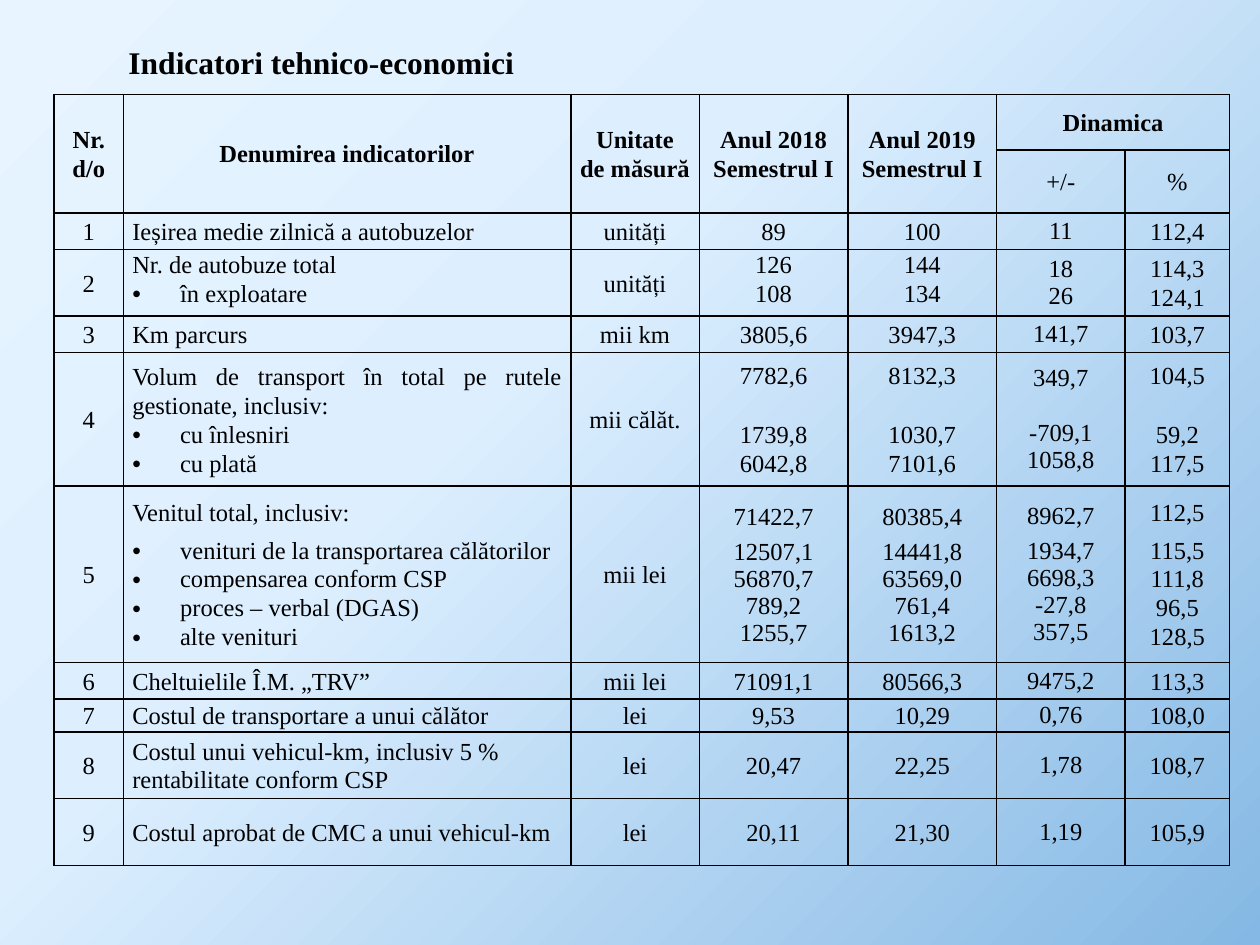
from dataclasses import dataclass

from lxml import etree
from pptx import Presentation
from pptx.dml.color import RGBColor
from pptx.enum.text import MSO_ANCHOR, PP_ALIGN
from pptx.oxml.ns import qn
from pptx.slide import Slide
from pptx.table import Table, _Cell
from pptx.text.text import _Paragraph
from pptx.util import Inches, Pt

CENTER, JUSTIFY, LEFT = PP_ALIGN.CENTER, PP_ALIGN.JUSTIFY, PP_ALIGN.LEFT
MIDDLE, TOP = MSO_ANCHOR.MIDDLE, MSO_ANCHOR.TOP

FONT = "Times New Roman"
TITLE_SIZE, TABLE_SIZE = 18, 14
LOOSE, TIGHT = 1.07, 1.0
LINE_FACTOR = 1.15
BULLET_INDENT = 0.38
COLORS = {"ink": "000000", "sky": "E8F4FF", "mist": "DDEFFF", "blue": "85B8E4"}
BACKGROUND_STOPS = ((0, "sky"), (40, "mist"), (100, "blue"))
BACKGROUND_FOCUS = {"l": -24, "t": -20, "r": 124, "b": 120}

TABLE_LEFT, TABLE_TOP = 0.43, 0.75
COLUMN_WIDTHS = (0.55, 3.55, 1.02, 1.18, 1.18, 1.02, 0.83)
HEADER_HEIGHTS = (0.44, 0.5)
DELTA_COLUMN = 5
YEAR_COLUMNS = (3, 4)


@dataclass(frozen=True)
class Heading:
    row: int
    column: int
    lines: tuple[str, ...]
    rows: int = 1
    columns: int = 1
    bold: bool = True


@dataclass(frozen=True)
class Indicator:
    height: float
    label: tuple[str, ...]
    unit: str
    values: tuple[str, str, str, str]
    label_align: PP_ALIGN = JUSTIFY
    top_aligned: bool = False
    label_gap: int = 0
    value_gap: int = 0
    tight_year_details: bool = False


HEADINGS = (
    Heading(0, 0, ("Nr.", "d/o"), rows=2),
    Heading(0, 1, ("Denumirea indicatorilor",), rows=2),
    Heading(0, 2, ("Unitate", "de măsură"), rows=2),
    Heading(0, 3, ("Anul 2018 Semestrul I",), rows=2),
    Heading(0, 4, ("Anul 2019 Semestrul I",), rows=2),
    Heading(0, 5, ("Dinamica",), columns=2),
    Heading(1, 5, ("+/-",), bold=False),
    Heading(1, 6, ("%",), bold=False),
)

INDICATORS = (
    Indicator(0.29, ("Ieșirea medie zilnică a autobuzelor",), "unități",
              ("89", "100", "11", "112,4")),
    Indicator(0.53, ("Nr. de autobuze total", "în exploatare"), "unități",
              ("126 108", "144 134", "18 26", "114,3 124,1"), top_aligned=True),
    Indicator(0.29, ("Km parcurs",), "mii km",
              ("3805,6", "3947,3", "141,7", "103,7")),
    Indicator(1.06, ("Volum de transport în total pe rutele gestionate, inclusiv:",
                     "cu înlesniri", "cu plată"), "mii călăt.",
              ("7782,6 1739,8 6042,8", "8132,3 1030,7 7101,6",
               "349,7 -709,1 1058,8", "104,5 59,2 117,5"), value_gap=14),
    Indicator(1.4, ("Venitul total, inclusiv:", "venituri de la transportarea călătorilor",
                    "compensarea conform CSP", "proces – verbal (DGAS)",
                    "alte venituri"), "mii lei",
              ("71422,7 12507,1 56870,7 789,2 1255,7",
               "80385,4 14441,8 63569,0 761,4 1613,2",
               "8962,7 1934,7 6698,3 -27,8 357,5",
               "112,5 115,5 111,8 96,5 128,5"),
              label_gap=4, value_gap=4, tight_year_details=True),
    Indicator(0.29, ("Cheltuielile Î.M. „TRV”",), "mii lei",
              ("71091,1", "80566,3", "9475,2", "113,3"), label_align=LEFT),
    Indicator(0.26, ("Costul de transportare a unui călător",), "lei",
              ("9,53", "10,29", "0,76", "108,0")),
    Indicator(0.53, ("Costul unui vehicul-km, inclusiv 5 % rentabilitate conform CSP",),
              "lei", ("20,47", "22,25", "1,78", "108,7"), label_align=LEFT),
    Indicator(0.53, ("Costul aprobat de CMC a unui vehicul-km",), "lei",
              ("20,11", "21,30", "1,19", "105,9")),
)


def format_runs(paragraph: _Paragraph, size: int, bold: bool) -> None:
    for run in paragraph.runs:
        run.font.name = FONT
        run.font.size = Pt(size)
        run.font.bold = bold
        run.font.color.rgb = RGBColor.from_string(COLORS["ink"])


def add_bullet(paragraph: _Paragraph) -> None:
    properties = paragraph._p.get_or_add_pPr()
    properties.set("marL", str(Inches(BULLET_INDENT)))
    properties.set("indent", str(-Inches(BULLET_INDENT)))
    etree.SubElement(properties, qn("a:buFont")).set("typeface", "Arial")
    etree.SubElement(properties, qn("a:buChar")).set("char", "•")


def write_cell(cell: _Cell, lines: tuple[str, ...], align: PP_ALIGN = CENTER,
               anchor: MSO_ANCHOR = MIDDLE, bold: bool = False, bulleted: bool = False,
               gap: int = 0, first_spacing: float = LOOSE,
               detail_spacing: float = LOOSE) -> None:
    cell.vertical_anchor = anchor
    cell.text_frame.text = "\n".join(lines)
    for index, paragraph in enumerate(cell.text_frame.paragraphs):
        paragraph.alignment = align
        paragraph.line_spacing = detail_spacing if index else first_spacing
        if index == 1 and gap:
            paragraph.space_before = Pt(round(gap * LINE_FACTOR * detail_spacing, 1))
        if index and bulleted:
            add_bullet(paragraph)
        format_runs(paragraph, TABLE_SIZE, bold)


def frame_cell(cell: _Cell) -> None:
    cell.margin_left = cell.margin_right = Inches(0.07)
    cell.margin_top = cell.margin_bottom = 0
    properties = cell._tc.get_or_add_tcPr()
    for side in ("a:lnL", "a:lnR", "a:lnT", "a:lnB"):
        border = etree.SubElement(properties, qn(side), w=str(Pt(1)))
        fill = etree.SubElement(border, qn("a:solidFill"))
        etree.SubElement(fill, qn("a:srgbClr"), val=COLORS["ink"])
    cell.fill.background()


def paint_background(slide: Slide) -> None:
    slide.background.fill.gradient()
    gradient = slide.element.find(".//" + qn("a:gradFill"))
    for child in list(gradient):
        gradient.remove(child)
    stops = etree.SubElement(gradient, qn("a:gsLst"))
    for position, color in BACKGROUND_STOPS:
        stop = etree.SubElement(stops, qn("a:gs"), pos=str(position * 1000))
        etree.SubElement(stop, qn("a:srgbClr"), val=COLORS[color])
    shape = etree.SubElement(gradient, qn("a:path"))
    shape.set("path", "circle")
    focus = etree.SubElement(shape, qn("a:fillToRect"))
    for side, percent in BACKGROUND_FOCUS.items():
        focus.set(side, str(percent * 1000))


def add_title(slide: Slide, text: str) -> None:
    title = slide.shapes.add_textbox(Inches(0.83), Inches(0.29), Inches(8.94), Inches(0.45))
    frame = title.text_frame
    frame.word_wrap = True
    frame.margin_left = Inches(0.19)
    frame.text = text
    format_runs(frame.paragraphs[0], TITLE_SIZE, True)


def write_heading(table: Table, heading: Heading) -> None:
    cell = table.cell(heading.row, heading.column)
    if heading.rows * heading.columns > 1:
        cell.merge(table.cell(heading.row + heading.rows - 1,
                              heading.column + heading.columns - 1))
    write_cell(cell, heading.lines, bold=heading.bold)


def write_indicator(table: Table, row: int, number: int, indicator: Indicator) -> None:
    anchor = TOP if indicator.top_aligned else MIDDLE
    write_cell(table.cell(row, 0), (str(number),))
    write_cell(table.cell(row, 1), indicator.label, indicator.label_align, anchor,
               bulleted=True, gap=indicator.label_gap)
    write_cell(table.cell(row, 2), (indicator.unit,))
    for column, values in enumerate(indicator.values, start=3):
        is_year, is_delta = column in YEAR_COLUMNS, column == DELTA_COLUMN
        tight_details = is_delta or (is_year and indicator.tight_year_details)
        write_cell(table.cell(row, column), tuple(values.split()),
                   anchor=anchor if is_year else MIDDLE, gap=indicator.value_gap,
                   first_spacing=TIGHT if is_delta else LOOSE,
                   detail_spacing=TIGHT if tight_details else LOOSE)


def add_indicator_table(slide: Slide) -> None:
    heights = [*HEADER_HEIGHTS, *(indicator.height for indicator in INDICATORS)]
    table = slide.shapes.add_table(
        len(heights), len(COLUMN_WIDTHS), Inches(TABLE_LEFT), Inches(TABLE_TOP),
        Inches(sum(COLUMN_WIDTHS)), Inches(sum(heights))).table
    table.first_row = table.horz_banding = False
    for column, width in zip(table.columns, COLUMN_WIDTHS):
        column.width = Inches(width)
    for row, height in zip(table.rows, heights):
        row.height = Inches(height)
    for cell in table.iter_cells():
        frame_cell(cell)
    for heading in HEADINGS:
        write_heading(table, heading)
    for number, indicator in enumerate(INDICATORS, start=1):
        write_indicator(table, number + 1, number, indicator)


def main() -> None:
    presentation = Presentation()
    presentation.slide_width, presentation.slide_height = Inches(10), Inches(7.5)
    slide = presentation.slides.add_slide(presentation.slide_layouts[6])
    paint_background(slide)
    add_title(slide, "Indicatori tehnico-economici")
    add_indicator_table(slide)
    presentation.save("out.pptx")


if __name__ == "__main__":
    main()
